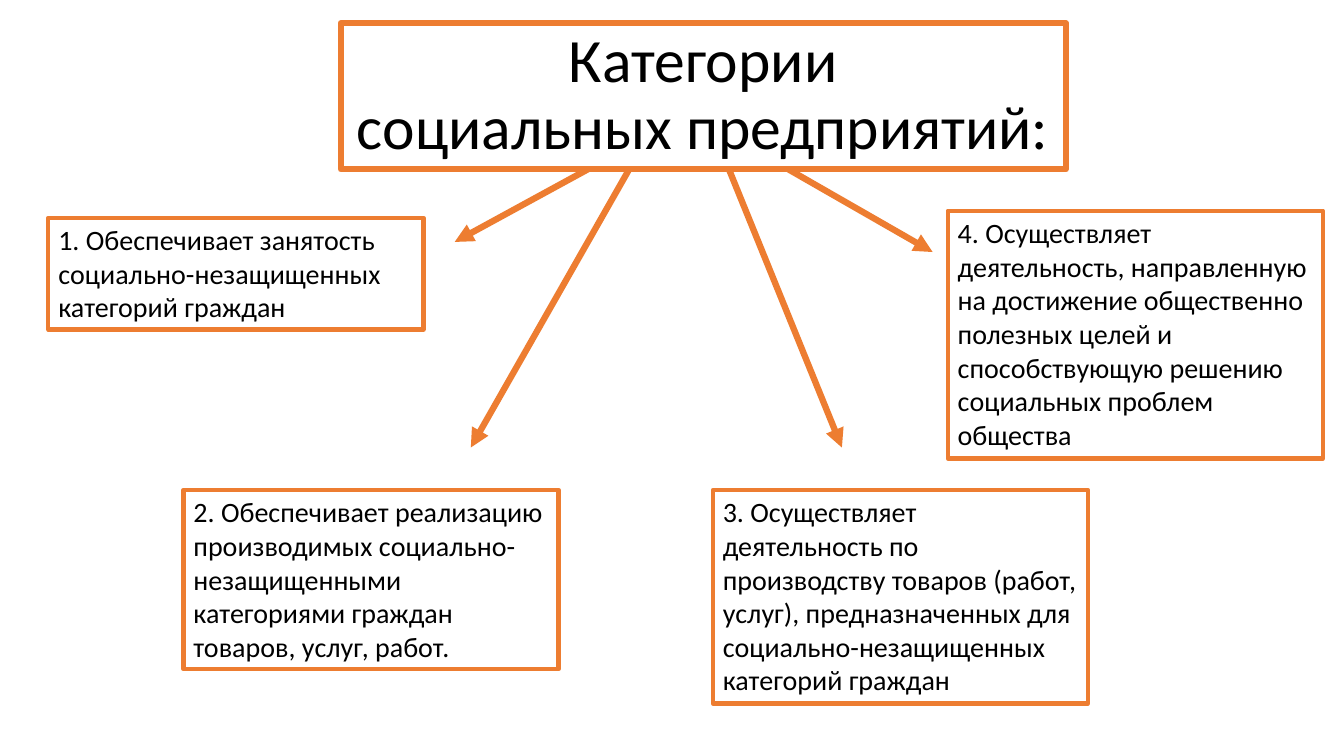
"""Build a slide on the four categories of social enterprises."""
from lxml import etree
from pptx import Presentation
from pptx.dml.color import RGBColor
from pptx.enum.shapes import MSO_CONNECTOR, MSO_SHAPE
from pptx.enum.text import MSO_ANCHOR, MSO_AUTO_SIZE, PP_ALIGN
from pptx.oxml.ns import qn
from pptx.util import Inches, Pt

ORANGE = RGBColor(0xED, 0x7D, 0x31)
WHITE = RGBColor(0xFF, 0xFF, 0xFF)
BLACK = RGBColor(0x00, 0x00, 0x00)
CENTER, LEFT = PP_ALIGN.CENTER, PP_ALIGN.LEFT
MIDDLE, TOP = MSO_ANCHOR.MIDDLE, MSO_ANCHOR.TOP
NO_FIT, GROW = MSO_AUTO_SIZE.NONE, MSO_AUTO_SIZE.SHAPE_TO_FIT_TEXT
RECT, STRAIGHT = MSO_SHAPE.RECTANGLE, MSO_CONNECTOR.STRAIGHT
BOX_WIDTH = 3.72
TITLE_BASE = 1.68

BOXES = [
    (0.48, 2.16, 1.11, "1. Обеспечивает занятость социально-незащищенных категорий граждан"),
    (1.82, 4.86, 1.78, "2. Обеспечивает реализацию производимых социально-незащищенными "
                       "категориями граждан товаров, услуг, работ."),
    (7.07, 4.86, 2.12, "3. Осуществляет деятельность по производству товаров (работ, услуг), "
                       "предназначенных для социально-незащищенных категорий граждан"),
    (9.4, 2.09, 2.46, "4. Осуществляет деятельность, направленную на достижение общественно "
                      "полезных целей и способствующую решению социальных проблем общества"),
]
ARROWS = [(5.83, 4.51, 2.4), (6.24, 4.67, 4.44), (7.82, 9.25, 2.5), (7.23, 8.35, 4.44)]


def fill_box(box, text, size, border, align, anchor, fit):
    box.fill.solid()
    box.fill.fore_color.rgb = WHITE
    box.line.color.rgb = ORANGE
    box.line.width = Pt(border)
    frame = box.text_frame
    frame.text = text
    frame.word_wrap = True
    frame.auto_size = fit
    frame.vertical_anchor = anchor
    par = frame.paragraphs[0]
    par.alignment = align
    for run in par.runs:
        run.font.name = "Calibri"
        run.font.size = Pt(size)
        run.font.color.rgb = BLACK


deck = Presentation()
deck.slide_width = Inches(13.33)
deck.slide_height = Inches(7.5)
slide = deck.slides.add_slide(deck.slide_layouts[5])

title = slide.shapes.title
title.left, title.top = Inches(3.38), Inches(0.23)
title.width, title.height = Inches(7.19), Inches(1.45)
fill_box(title, "Категории\vсоциальных предприятий:", 44, 4.5, CENTER, MIDDLE, NO_FIT)
title.text_frame.paragraphs[0].line_spacing = 0.9

for left, top, height, text in BOXES:
    box = slide.shapes.add_shape(
        RECT, Inches(left), Inches(top), Inches(BOX_WIDTH), Inches(height))
    box.shadow.inherit = False
    fill_box(box, text, 20, 3, LEFT, TOP, GROW)

for start, end, base in ARROWS:
    arrow = slide.shapes.add_connector(
        STRAIGHT, Inches(start), Inches(TITLE_BASE), Inches(end), Inches(base))
    arrow.line.color.rgb = ORANGE
    arrow.line.width = Pt(4.5)
    props = arrow.element.spPr
    etree.SubElement(props.find(qn("a:ln")), qn("a:tailEnd"), type="triangle")
    etree.SubElement(props, qn("a:effectLst"))

deck.save("out.pptx")
